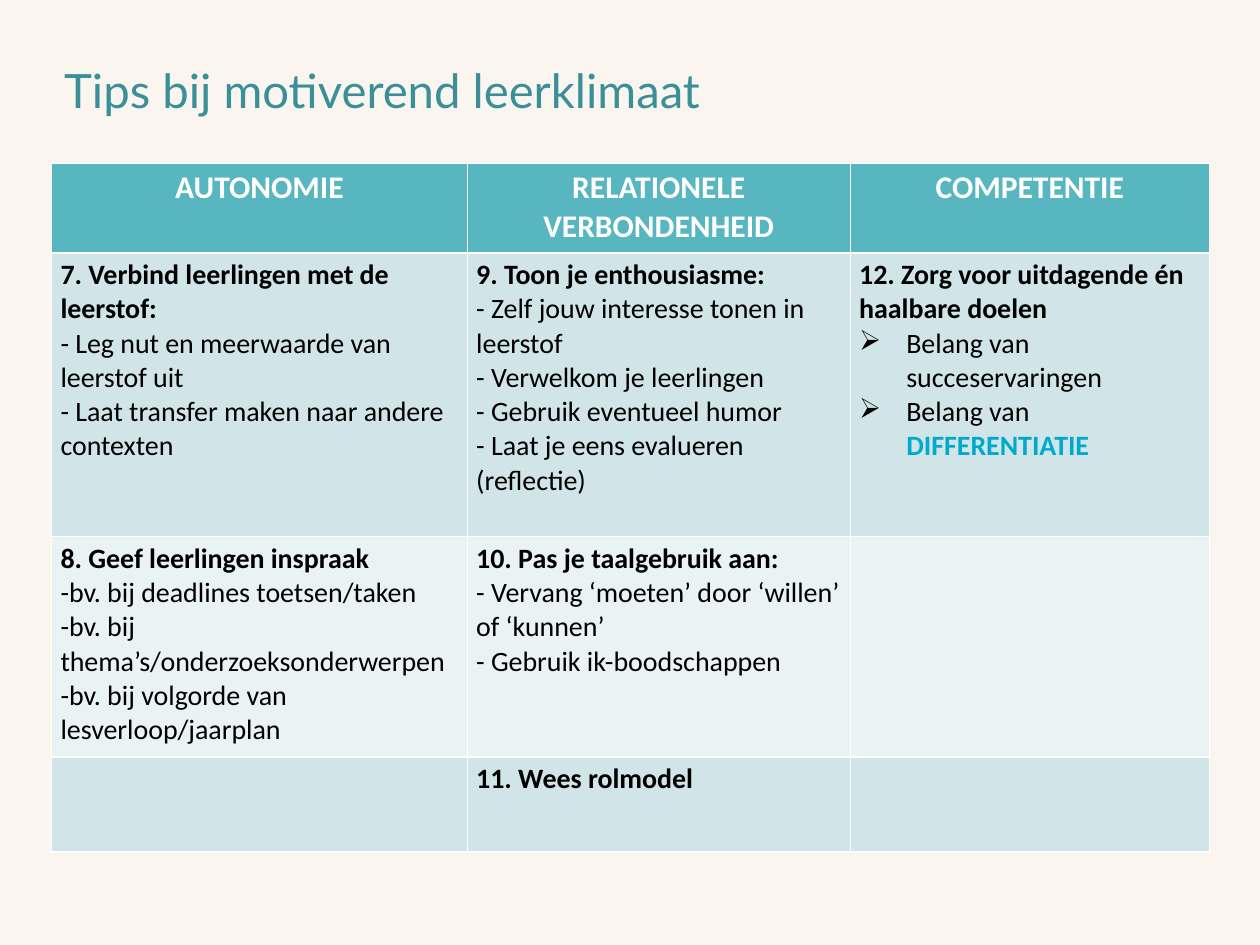
"""Build the slide with tips for a motivating learning climate."""
from dataclasses import dataclass

from lxml import etree
from pptx import Presentation
from pptx import util as u
from pptx.dml.color import RGBColor
from pptx.enum import text
from pptx.oxml.ns import qn


@dataclass(frozen=True)
class Theme:
    background: str = "FAF6EF"
    title: str = "3A8F98"
    header: str = "58B6C0"
    bands: tuple = ("D1E5E8", "EAF3F4")
    white: str = "FFFFFF"
    black: str = "000000"
    accent: str = "00AACC"
    title_font: str = "Lato"
    body_font: str = "Calibri"
    title_size: float = 27
    header_size: float = 18
    body_size: float = 16


THEME = Theme()
BULLET = "➢"
COLUMN_WIDTHS = (8.38, 7.72, 7.24)
ROW_HEIGHTS = (1.8, 5.72, 4.44, 1.92)
HEADERS = ("AUTONOMIE", "RELATIONELE VERBONDENHEID", "COMPETENTIE")
TIPS = (
    (
        ("7. Verbind leerlingen met de leerstof:",
         "- Leg nut en meerwaarde van leerstof uit",
         "- Laat transfer maken naar andere contexten"),
        ("9. Toon je enthousiasme:",
         "- Zelf jouw interesse tonen in leerstof",
         "- Verwelkom je leerlingen",
         "- Gebruik eventueel humor",
         "- Laat je eens evalueren (reflectie)"),
        ("12. Zorg voor uitdagende én haalbare doelen",
         BULLET + "Belang van succeservaringen",
         BULLET + "Belang van *DIFFERENTIATIE"),
    ),
    (
        ("8. Geef leerlingen inspraak",
         "-bv. bij deadlines toetsen/taken",
         "-bv. bij thema’s/onderzoeksonderwerpen",
         "-bv. bij volgorde van lesverloop/jaarplan"),
        ("10. Pas je taalgebruik aan:",
         "- Vervang ‘moeten’ door ‘willen’ of ‘kunnen’",
         "- Gebruik ik-boodschappen"),
        (),
    ),
    ((), ("11. Wees rolmodel",), ()),
)


def format_run(run, font, size, color, bold=False):
    """Give a run its font, size, colour and weight."""
    run.font.name = font
    run.font.size = u.Pt(size)
    run.font.bold = bold
    run.font.color.rgb = RGBColor.from_string(color)


def fill_solid(target, color):
    """Fill a cell or background with one colour."""
    target.fill.solid()
    target.fill.fore_color.rgb = RGBColor.from_string(color)


def add_bullet(paragraph):
    """Turn a paragraph into a bulleted item with a hanging indent."""
    properties = paragraph._p.get_or_add_pPr()
    indent = u.Cm(0.95)
    properties.set("marL", str(indent))
    properties.set("indent", str(-indent))
    etree.SubElement(properties, qn("a:buChar")).set("char", BULLET)


def add_title(slide, wording):
    """Place and format the title placeholder."""
    title = slide.shapes.title
    title.left, title.top = u.Cm(1.04), u.Cm(1.19)
    title.width, title.height = u.Cm(17.12), u.Cm(1.37)
    title.text_frame.text = wording
    title.text_frame.vertical_anchor = text.MSO_ANCHOR.MIDDLE
    paragraph = title.text_frame.paragraphs[0]
    paragraph.alignment = text.PP_ALIGN.LEFT
    paragraph.line_spacing = 0.9
    format_run(paragraph.runs[0], THEME.title_font, THEME.title_size, THEME.title)


def write_header(cell, wording):
    """Write a centred column heading."""
    fill_solid(cell, THEME.header)
    cell.text_frame.text = wording
    paragraph = cell.text_frame.paragraphs[0]
    paragraph.alignment = text.PP_ALIGN.CENTER
    format_run(paragraph.runs[0], THEME.body_font, THEME.header_size, THEME.white, True)


def write_tip(cell, lines, color):
    """Write a bold tip followed by its plain, bulleted or accented lines."""
    fill_solid(cell, color)
    cell.text_frame.text = "\n".join(line.lstrip(BULLET).split("*")[0] for line in lines)
    for index, (line, paragraph) in enumerate(zip(lines, cell.text_frame.paragraphs)):
        format_run(paragraph.runs[0], THEME.body_font, THEME.body_size, THEME.black, index == 0)
        if line.startswith(BULLET):
            add_bullet(paragraph)
        if "*" in line:
            accent = paragraph.add_run()
            accent.text = line.split("*")[1]
            format_run(accent, THEME.body_font, THEME.body_size, THEME.accent, True)


def add_tips_table(slide):
    """Add the table with one column for each basic need."""
    table = slide.shapes.add_table(
        len(ROW_HEIGHTS), len(COLUMN_WIDTHS), u.Cm(1.04), u.Cm(3.3),
        u.Cm(sum(COLUMN_WIDTHS)), u.Cm(sum(ROW_HEIGHTS))).table
    for column, width in zip(table.columns, COLUMN_WIDTHS):
        column.width = u.Cm(width)
    for row, height in zip(table.rows, ROW_HEIGHTS):
        row.height = u.Cm(height)
    for cell, wording in zip(table.rows[0].cells, HEADERS):
        write_header(cell, wording)
    for index, tips in enumerate(TIPS):
        for cell, lines in zip(table.rows[index + 1].cells, tips):
            write_tip(cell, lines, THEME.bands[index % 2])
    for cell in table.iter_cells():
        cell.margin_left = cell.margin_right = u.Cm(0.18)
        cell.margin_top = cell.margin_bottom = u.Cm(0.1)


def main():
    """Build and save the presentation."""
    presentation = Presentation()
    presentation.slide_width, presentation.slide_height = u.Cm(25.4), u.Cm(19.05)
    slide = presentation.slides.add_slide(presentation.slide_layouts[5])
    fill_solid(slide.background, THEME.background)
    add_tips_table(slide)
    add_title(slide, "Tips bij motiverend leerklimaat")
    presentation.save("out.pptx")


if __name__ == "__main__":
    main()
